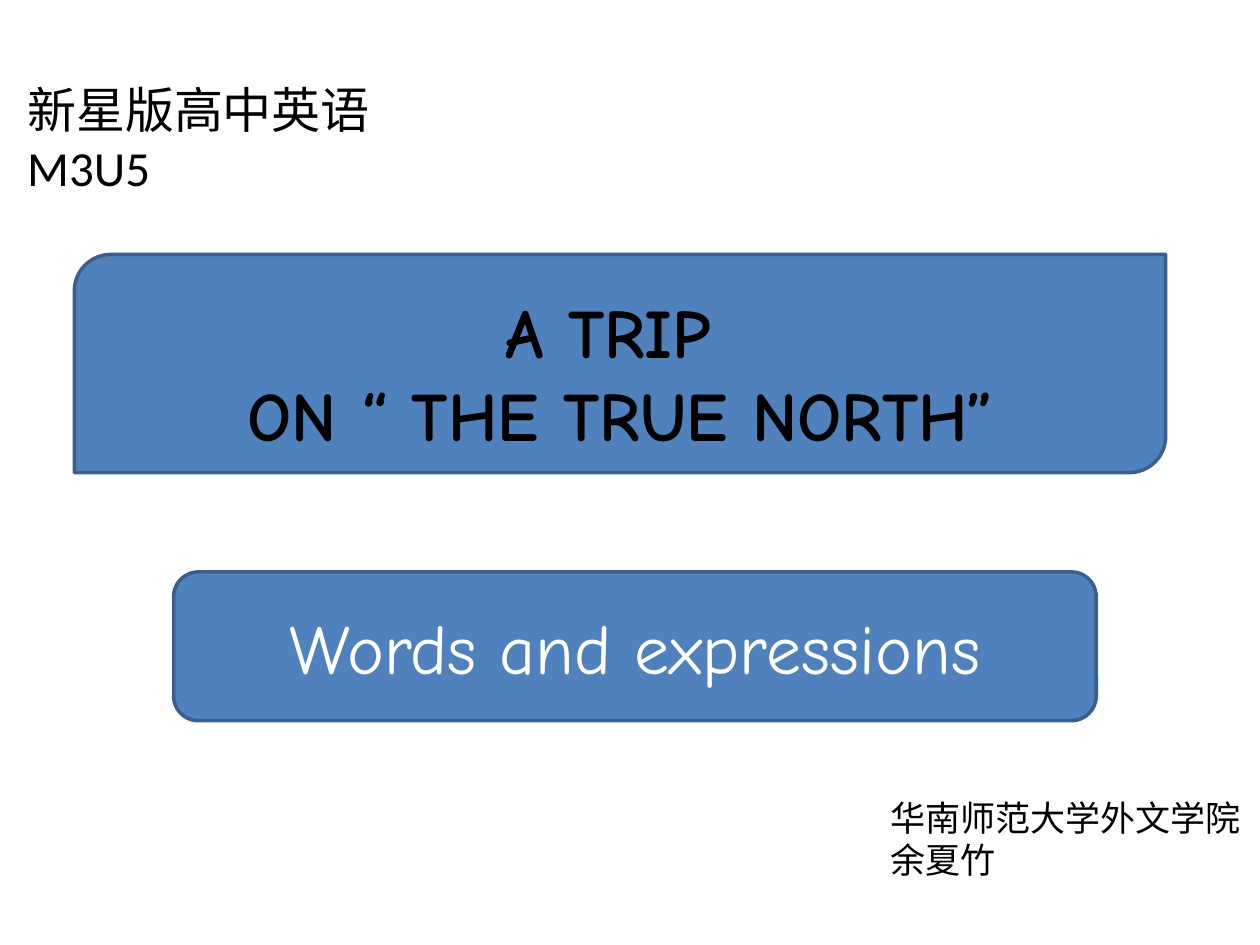
from dataclasses import dataclass
from typing import Optional

from pptx import Presentation
from pptx import util as u
from pptx.dml.color import RGBColor
from pptx.enum import shapes, text

BLUE = RGBColor(0x4F, 0x81, 0xBD)
DARK_BLUE = RGBColor(0x3A, 0x5F, 0x8C)
BLACK = RGBColor(0, 0, 0)
WHITE = RGBColor(255, 255, 255)

LEFT, CENTER = text.PP_ALIGN.LEFT, text.PP_ALIGN.CENTER
TOP, MIDDLE = text.MSO_ANCHOR.TOP, text.MSO_ANCHOR.MIDDLE


@dataclass(frozen=True)
class Box:
    """Position and size in centimetres."""
    left: float
    top: float
    width: float
    height: float

    def lengths(self) -> tuple:
        return tuple(u.Cm(n) for n in (self.left, self.top, self.width, self.height))


@dataclass(frozen=True)
class Label:
    wording: str
    font: dict
    alignment: text.PP_ALIGN = LEFT
    anchor: text.MSO_ANCHOR = TOP


@dataclass(frozen=True)
class Panel:
    preset: shapes.MSO_SHAPE
    box: Box
    label: Optional[Label] = None


COMIC = "Comic Neue"
PANELS = (
    Panel(shapes.MSO_SHAPE.ROUND_2_DIAG_RECTANGLE, Box(1.5, 5.13, 22, 4.4)),
    Panel(shapes.MSO_SHAPE.ROUNDED_RECTANGLE, Box(3.5, 11.53, 18.6, 3),
          Label("Words and expressions",
                dict(name=COMIC, size=u.Pt(40), color=WHITE), CENTER, MIDDLE)),
)
# A vertical tab is a line break, a newline starts a paragraph.
TEXT_BOXES = (
    (Box(1.83, 6, 21.36, 3),
     Label("A TRIP \vON “ THE TRUE NORTH”",
           dict(name=COMIC, size=u.Pt(39.6), bold=True, color=BLACK), CENTER, MIDDLE)),
    (Box(0.3, 1.47, 10.24, 1.45),
     Label("新星版高中英语\vM3U5", dict(name="Calibri", size=u.Pt(28), color=BLACK))),
    (Box(17.7, 15.93, 7.65, 1.96),
     Label("华南师范大学外文学院\n余夏竹",
           dict(name="Noto Sans CJK JP", size=u.Pt(20), color=BLACK))),
)


def write_label(shape, label: Label) -> None:
    frame = shape.text_frame
    frame.word_wrap = True
    frame.vertical_anchor = label.anchor
    frame.text = label.wording
    for paragraph in frame.paragraphs:
        paragraph.alignment = label.alignment
        for run in paragraph.runs:
            for attribute, value in label.font.items():
                if attribute == "color":
                    run.font.color.rgb = value
                else:
                    setattr(run.font, attribute, value)


def draw_panel(slide, panel: Panel) -> None:
    shape = slide.shapes.add_shape(panel.preset, *panel.box.lengths())
    shape.shadow.inherit = False
    shape.fill.solid()
    shape.fill.fore_color.rgb = BLUE
    shape.line.color.rgb = DARK_BLUE
    shape.line.width = u.Pt(2)
    if panel.label:
        write_label(shape, panel.label)


def main() -> None:
    presentation = Presentation()
    presentation.slide_width, presentation.slide_height = u.Cm(25.4), u.Cm(19.05)
    slide = presentation.slides.add_slide(presentation.slide_layouts[6])
    for panel in PANELS:
        draw_panel(slide, panel)
    for box, label in TEXT_BOXES:
        write_label(slide.shapes.add_textbox(*box.lengths()), label)
    presentation.save("out.pptx")


if __name__ == "__main__":
    main()
